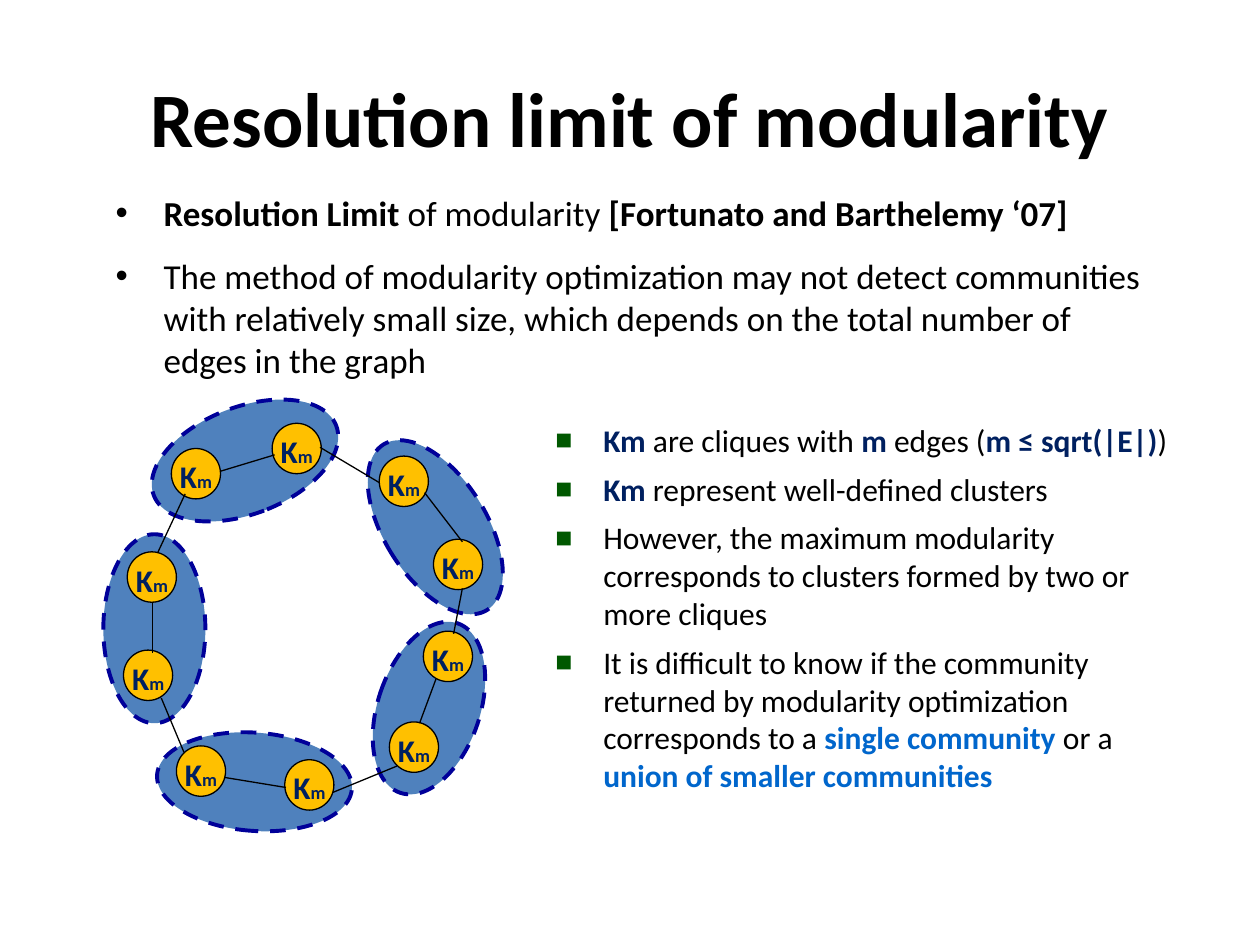
from lxml.etree import SubElement
from pptx import Presentation
from pptx.dml.color import RGBColor
from pptx.enum.dml import MSO_LINE
from pptx.enum.shapes import MSO_CONNECTOR, MSO_SHAPE
from pptx.enum.text import MSO_ANCHOR, PP_ALIGN
from pptx.oxml.ns import qn
from pptx.util import Inches, Pt

BLACK = RGBColor(0, 0, 0)
NAVY = RGBColor(0x00, 0x20, 0x60)
LINK_BLUE = RGBColor(0x00, 0x66, 0xCC)
CLUSTER_FILL = RGBColor(0x4F, 0x81, 0xBD)
CLUSTER_LINE = RGBColor(0x00, 0x00, 0x99)
CLIQUE_FILL = RGBColor(0xFF, 0xC0, 0x00)
FONT = "Calibri"
CLIQUE_WIDTH, CLIQUE_HEIGHT = 0.39, 0.4

# Content: a run is (text, bold, colour)
TITLE = "Resolution limit of modularity"
INTRODUCTION = [
    [("Resolution Limit ", True, BLACK), ("of modularity ", False, BLACK),
     ("[Fortunato and Barthelemy ‘07]", True, BLACK)],
    [("The method of modularity optimization may not detect communities with "
      "relatively small size, which depends on the total number of edges in the graph",
      False, BLACK)],
]
EXPLANATION = [
    [("Km", True, NAVY), (" are cliques with ", False, BLACK), ("m ", True, NAVY),
     ("edges (", False, BLACK), ("m ≤ sqrt(|E|)", True, NAVY), (")", False, BLACK)],
    [("Km", True, NAVY), (" represent well-defined clusters", False, BLACK)],
    [("However, the maximum modularity corresponds to clusters formed by two or "
      "more cliques", False, BLACK)],
    [("It is difficult to know if the community returned by modularity optimization "
      "corresponds to a ", False, BLACK), ("single community ", True, LINK_BLUE),
     ("or a ", False, BLACK), ("union of smaller communities", True, LINK_BLUE)],
]

# Clusters: left, top, width, height, rotation
CLUSTERS = [
    (3.0, 4.91, 0.81, 1.42, 18.7),
    (1.63, 5.43, 0.78, 1.55, 274.2),
    (0.82, 4.24, 0.81, 1.5, 0),
    (1.52, 2.88, 0.85, 1.55, 249.1),
    (3.05, 3.41, 0.81, 1.55, 327.9),
]
# Cliques: left, top
CLIQUES = [
    (1.01, 4.38), (0.98, 5.16), (1.4, 5.92), (2.26, 6.03), (3.09, 5.73),
    (1.36, 3.56), (2.16, 3.36), (3.01, 3.62), (3.44, 4.28), (3.36, 5.01),
]
# Edges of the ring: start, end
EDGES = [
    ((2.54, 3.55), (3.01, 3.83)), ((3.37, 3.91), (3.67, 4.3)),
    ((3.67, 4.67), (3.6, 5.03)), ((3.46, 5.39), (3.33, 5.74)),
    ((2.64, 6.29), (3.15, 6.08)), ((1.78, 6.17), (2.27, 6.25)),
    ((1.28, 5.54), (1.46, 5.97)), ((1.21, 4.78), (1.21, 5.18)),
    ((1.25, 4.39), (1.47, 3.92)), ((1.75, 3.74), (2.18, 3.61)),
]


def add_run(paragraph, text, size, bold=False, color=BLACK):
    run = paragraph.add_run()
    run.text = text
    run.font.name = FONT
    run.font.size = Pt(size)
    run.font.bold = bold
    run.font.color.rgb = color


def add_ellipse(slide, box, fill, line, weight, dash=None, rotation=0):
    ellipse = slide.shapes.add_shape(MSO_SHAPE.OVAL, *map(Inches, box))
    ellipse.shadow.inherit = False
    ellipse.rotation = rotation
    ellipse.fill.solid()
    ellipse.fill.fore_color.rgb = fill
    ellipse.line.color.rgb = line
    ellipse.line.width = Pt(weight)
    if dash is not None:
        ellipse.line.dash_style = dash


def add_text_box(slide, box):
    frame = slide.shapes.add_textbox(*map(Inches, box)).text_frame
    frame.word_wrap = True
    return frame


def set_bullet(paragraph, character, color=None, percent=100):
    properties = paragraph._p.get_or_add_pPr()
    properties.set("marL", str(Inches(0.38)))
    properties.set("indent", str(Inches(-0.38)))
    if color:
        bullet_color = SubElement(properties, qn("a:buClr"))
        SubElement(bullet_color, qn("a:srgbClr"), val=color)
    SubElement(properties, qn("a:buSzPct"), val=str(percent * 1000))
    SubElement(properties, qn("a:buFont"), typeface="Arial")
    SubElement(properties, qn("a:buChar"), char=character)


def add_bullet_list(slide, box, items, size, space_before, **bullet):
    frame = add_text_box(slide, box)
    for index, runs in enumerate(items):
        paragraph = frame.add_paragraph() if index else frame.paragraphs[0]
        paragraph.space_before = Pt(space_before)
        set_bullet(paragraph, **bullet)
        for text, bold, color in runs:
            add_run(paragraph, text, size, bold=bold, color=color)


def add_edge(slide, start, end):
    edge = slide.shapes.add_connector(
        MSO_CONNECTOR.STRAIGHT, *map(Inches, start + end))
    edge.line.color.rgb = BLACK
    edge.line.width = Pt(0.75)
    SubElement(edge._element.spPr, qn("a:effectLst"))


def main():
    presentation = Presentation()
    presentation.slide_width = Inches(10)
    presentation.slide_height = Inches(7.5)
    slide = presentation.slides.add_slide(presentation.slide_layouts[5])

    # Title
    title = slide.shapes.title
    title.left, title.top, title.width, title.height = map(Inches, (0.5, 0.3, 9, 1.25))
    title.text_frame.vertical_anchor = MSO_ANCHOR.MIDDLE
    paragraph = title.text_frame.paragraphs[0]
    paragraph.alignment = PP_ALIGN.CENTER
    add_run(paragraph, TITLE, 44, bold=True)

    # Clusters behind the ring of cliques
    for *box, rotation in CLUSTERS:
        add_ellipse(slide, box, CLUSTER_FILL, CLUSTER_LINE, 2.25,
                    dash=MSO_LINE.DASH, rotation=rotation)

    # Introduction
    add_bullet_list(slide, (0.82, 1.47, 8.49, 1.7), INTRODUCTION, 20, 12, character="•")

    # Cliques with their labels
    for left, top in CLIQUES:
        add_ellipse(slide, (left, top, CLIQUE_WIDTH, CLIQUE_HEIGHT),
                    CLIQUE_FILL, BLACK, 0.75)
        label = add_text_box(slide, (left - 0.03, top + 0.02, 0.53, 0.37))
        add_run(label.paragraphs[0], "K", 18, bold=True, color=NAVY)
        add_run(label.paragraphs[0], "m", 10.5, bold=True, color=NAVY)

    # Edges
    for start, end in EDGES:
        add_edge(slide, start, end)

    # Explanation
    add_bullet_list(slide, (4.31, 3.29, 5.25, 3.21), EXPLANATION, 18, 6.3,
                    character="■", color="005800", percent=90)

    presentation.save("out.pptx")


if __name__ == "__main__":
    main()
